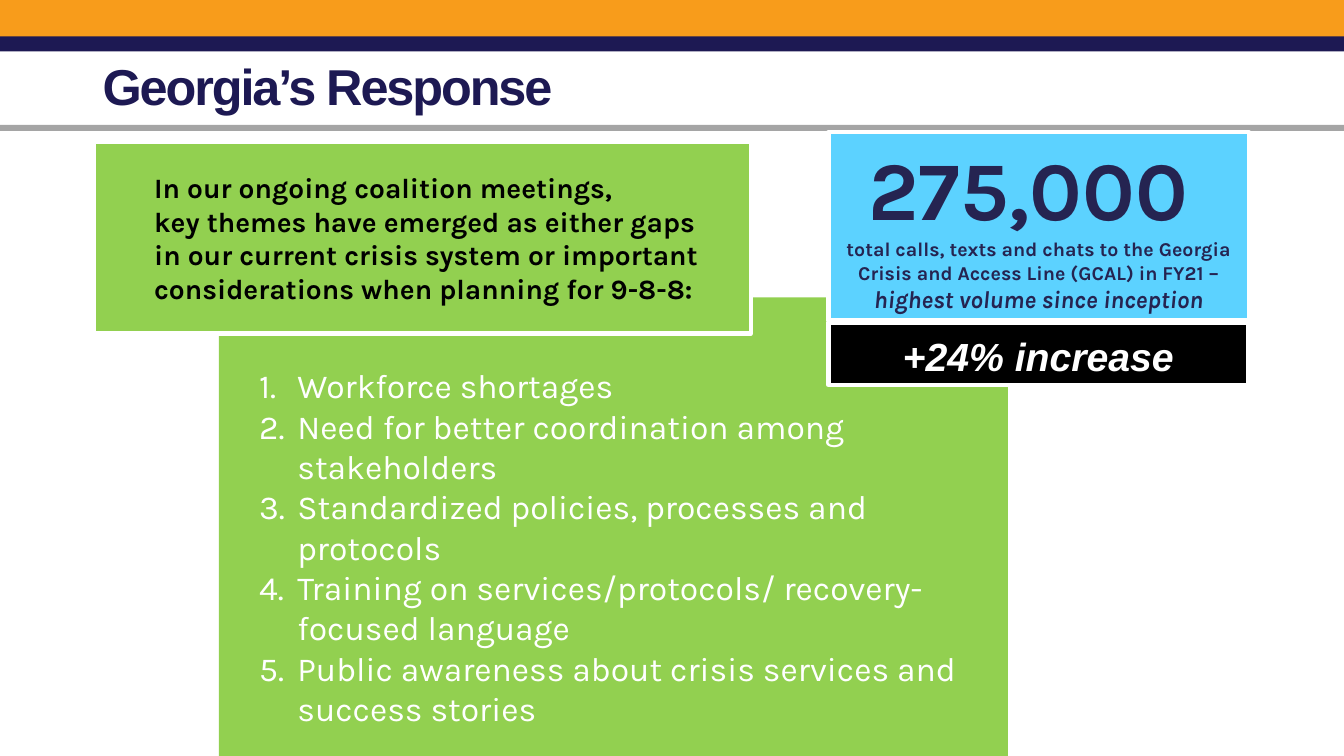
"""Build the Georgia's Response slide with its coalition themes and call volume."""
from dataclasses import dataclass
from typing import Optional

from lxml.etree import SubElement
from pptx import Presentation
from pptx.dml.color import RGBColor
from pptx.enum.shapes import MSO_SHAPE
from pptx.enum.text import MSO_ANCHOR, PP_ALIGN
from pptx.oxml.ns import qn
from pptx.util import Inches, Pt

ORANGE = RGBColor(0xF8, 0x9C, 0x1B)
NAVY = RGBColor(0x1D, 0x19, 0x53)
GRAY = RGBColor(0xA5, 0xA5, 0xA5)
GREEN = RGBColor(0x92, 0xD0, 0x50)
SKY = RGBColor(0x5C, 0xD2, 0xFF)
INK = RGBColor(0x25, 0x24, 0x51)
BLACK = RGBColor(0, 0, 0)
WHITE = RGBColor(0xFF, 0xFF, 0xFF)

prs = Presentation()
prs.slide_width, prs.slide_height = Inches(13.33), Inches(7.5)
slide = prs.slides.add_slide(prs.slide_layouts[6])


@dataclass(frozen=True)
class Box:
    """Hold a rectangle in percent of the slide, with its colours and insets."""
    left: float
    top: float
    width: float
    height: float
    fill: Optional[RGBColor] = None
    outline: Optional[RGBColor] = None
    insets: tuple[float, float, float, float] = (0.1, 0.05, 0.1, 0.05)
    anchor: MSO_ANCHOR = MSO_ANCHOR.MIDDLE


def draw_box(box: Box):
    """Draw a box and return its text frame."""
    sp = slide.shapes.add_shape(
        MSO_SHAPE.RECTANGLE,
        int(prs.slide_width * box.left / 100), int(prs.slide_height * box.top / 100),
        int(prs.slide_width * box.width / 100), int(prs.slide_height * box.height / 100))
    sp.shadow.inherit = False
    if box.fill is None:
        sp.fill.background()
    else:
        sp.fill.solid()
        sp.fill.fore_color.rgb = box.fill
    if box.outline is None:
        sp.line.fill.background()
    else:
        sp.line.color.rgb = box.outline
        sp.line.width = Pt(3)
    tf = sp.text_frame
    tf.word_wrap = True
    tf.vertical_anchor = box.anchor
    tf.margin_left, tf.margin_top, tf.margin_right, tf.margin_bottom = map(Inches, box.insets)
    return tf


def add_text(tf, text: str, *, size: float, color: RGBColor, font: str = "Karla",
             bold: bool = False, italic: bool = False, align: PP_ALIGN = PP_ALIGN.LEFT,
             spacing: float = 1, indent: float = 0, numbered: bool = False,
             tracking: int = 0) -> None:
    """Add one formatted paragraph to a text frame."""
    p = tf.add_paragraph() if tf.paragraphs[0].runs else tf.paragraphs[0]
    p.alignment = align
    p.line_spacing = spacing
    pPr = p._p.get_or_add_pPr()
    pPr.set("marL", str(Inches(indent)))
    pPr.set("indent", str(Inches(-indent if numbered else 0)))
    if numbered:
        SubElement(pPr, qn("a:buFont"), typeface="+mj-lt")
        SubElement(pPr, qn("a:buAutoNum"), type="arabicPeriod")
    r = p.add_run()
    r.text = text
    r.font.name, r.font.size = font, Pt(size)
    r.font.bold, r.font.italic = bold, italic
    r.font.color.rgb = color
    if tracking:
        r._r.get_or_add_rPr().set("spc", str(tracking))


BANDS = (
    Box(0, 0, 100, 5.33, ORANGE),
    Box(0, 4.8, 100, 2, NAVY),
    Box(0, 16.53, 100, 0.8, GRAY),
)
THEMES = Box(16.28, 39.33, 58.72, 60.67, GREEN, insets=(0.4, 0.5, 0.4, 0.1))
TITLE = Box(6.9, 2.13, 86.25, 19.33)
INCREASE = Box(61.65, 42.67, 31.2, 8.27, BLACK, WHITE, (0.16, 0.16, 0.16, 0.16))
CALLS = Box(61.65, 17.47, 31.27, 24.93, SKY, WHITE, anchor=MSO_ANCHOR.TOP)
INTRO = Box(6.98, 18.8, 48.9, 25.33, GREEN, WHITE, (0.1, 0.05, 0.3, 0.05))

THEME_ITEMS = (
    "Workforce shortages",
    "Need for better coordination among stakeholders",
    "Standardized policies, processes and protocols",
    "Training on services/protocols/ recovery-focused language",
    "Public awareness about crisis services and success stories",
)
INTRO_LINES = (
    "In our ongoing coalition meetings,",
    "key themes have emerged as either gaps in our current crisis system or important "
    "considerations when planning for 9-8-8:",
)
CALL_LINES = (
    ("275,000 ", 59.5, False),
    ("total calls, texts and chats to the Georgia Crisis and Access Line (GCAL) in FY21 –",
     14, False),
    ("highest volume since inception", 17.5, True),
)


def main() -> None:
    """Draw the slide from back to front and save it."""
    for band in BANDS:
        draw_box(band)

    tf = draw_box(THEMES)
    for item in THEME_ITEMS:
        add_text(tf, item, size=24, color=WHITE, indent=0.38, numbered=True)

    add_text(draw_box(TITLE), "Georgia’s Response", size=36, color=NAVY, font="Arial",
             bold=True, spacing=0.9, tracking=-150)
    add_text(draw_box(INCREASE), "+24% increase", size=28, color=WHITE, font="Arial",
             bold=True, italic=True, align=PP_ALIGN.CENTER, spacing=1.07)

    tf = draw_box(CALLS)
    for text, size, italic in CALL_LINES:
        add_text(tf, text, size=size, color=INK, bold=True, italic=italic,
                 align=PP_ALIGN.CENTER)

    tf = draw_box(INTRO)
    for line in INTRO_LINES:
        add_text(tf, line, size=20, color=BLACK, bold=True, indent=0.5)

    prs.save("out.pptx")


if __name__ == "__main__":
    main()
